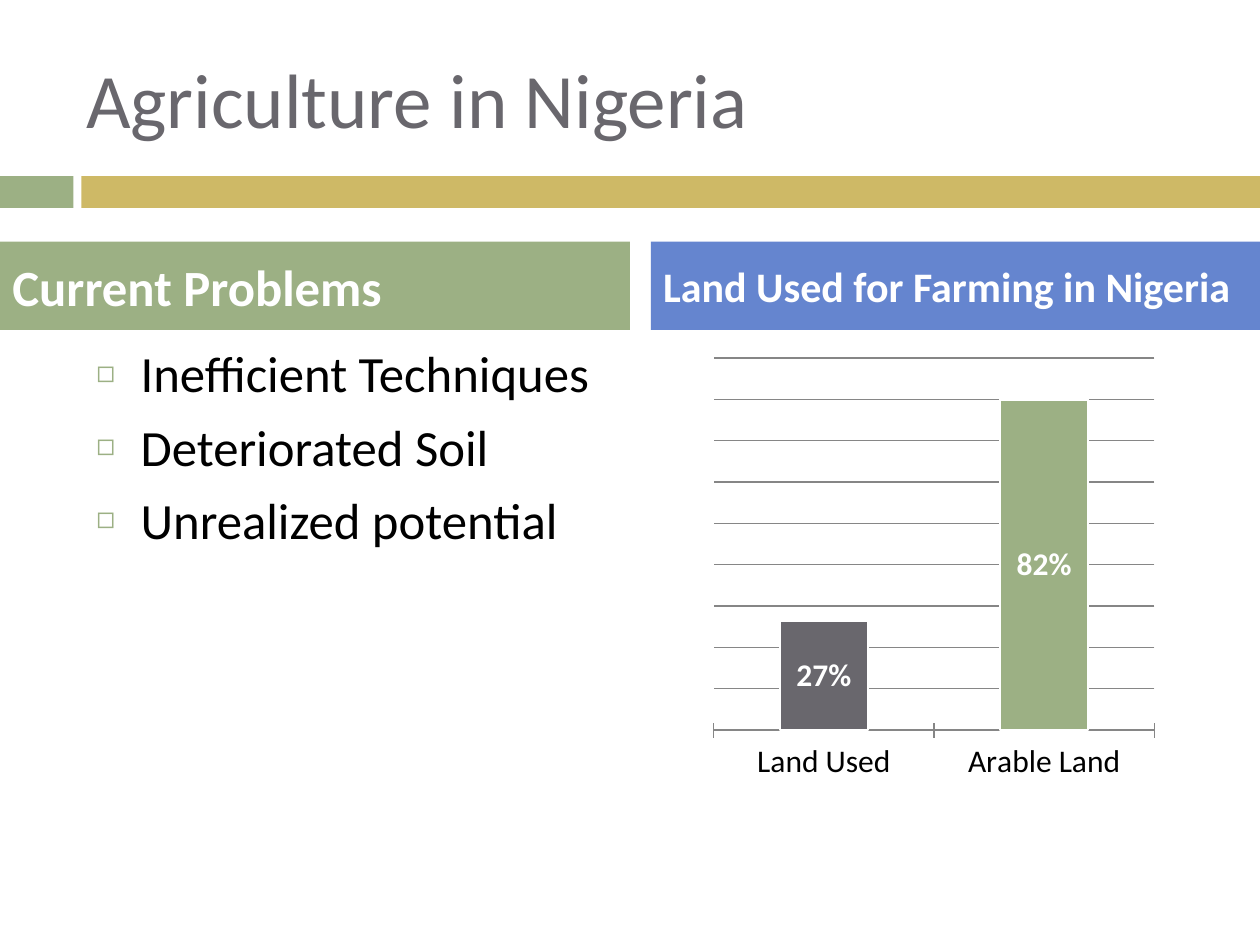
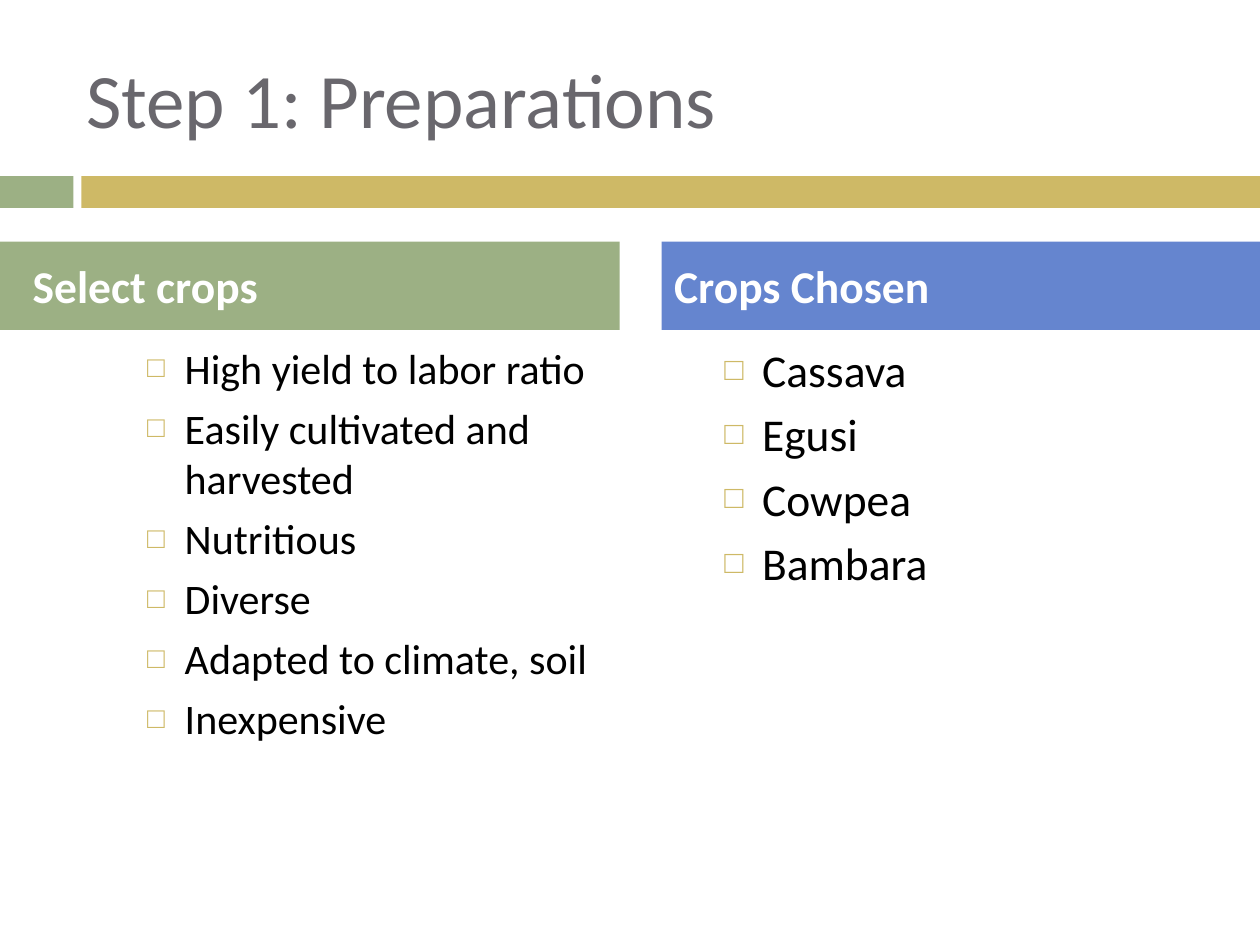
from lxml import etree
from pptx import Presentation
from pptx import util as u
from pptx.chart import data as cd
from pptx.dml import color as col
from pptx.enum import chart as ch, shapes, text
from pptx.oxml import ns, parse_xml

FONT = "Calibri"
HUES = {"green": "9CB084", "gold": "CEB966", "blue": "6585CF", "gray": "69676D",
        "line": "868686", "black": "000000", "white": "FFFFFF"}
WIDE, TALL = 25.4, 19.05

# Bullet styles: mark, its hue and size, left margin and hang in cm, space before in pt
MAIN = dict(level=0, mark="◻", hue="green", pct=60, left=0.89, hang=0.89, gap=7)
SUB = dict(level=1, mark="□", hue="gold", pct=70, left=1.78, hang=0.76, gap=5.5)

LAND = {"Land Used": (0.264, "27%", "gray"), "Arable Land": (0.8, "82%", "green")}

# Each head: text, size, left, right, extra inset; each list: style, size, items
SLIDES = [
    {"title": "Agriculture in Nigeria",
     "heads": [("Current Problems", 29, 0, 12.7, 0),
               ("Land Used for Farming in Nigeria", 24, 13.12, WIDE, 0)],
     "lists": [(MAIN, 29, ["Inefficient Techniques", "Deteriorated Soil",
                           "Unrealized potential"])],
     "chart": LAND},
    {"title": "Step 1: Preparations",
     "heads": [("Select crops", 26, 0, 12.49, 0.41),
               ("Crops Chosen", 26, 13.34, WIDE, 0)],
     "lists": [(SUB, 24, ["High yield to labor ratio",
                          "Easily cultivated and harvested", "Nutritious",
                          "Diverse", "Adapted to climate, soil", "Inexpensive"]),
               (SUB, 26, ["Cassava", "Egusi", "Cowpea", "Bambara"])]},
]

TITLE = (1.48, 0.76, 22.66, 2.41)
BANDS = [(0, 1.48, "green"), (1.64, WIDE, "gold")]
BAND_TOP, BAND_TALL = 3.55, 0.64
HEAD_TOP, HEAD_TALL = 4.87, 1.78
HEAD_HUES = ["green", "blue"]
LIST_LEFTS = [1.69, 13.33]
LIST_TOP, LIST_WIDE, LIST_TALL = 6.77, 10.8, 9.96
CHART = (13.97, 6.35, 9.53, 11)
PLOT = {"x": 0.044, "y": 0.079, "w": 0.932, "h": 0.682}
PERCENT = "0.00%"


def rgb(hue):
    return col.RGBColor.from_string(HUES[hue])


def paint(fill, hue):
    fill.solid()
    fill.fore_color.rgb = rgb(hue)


def place(shape, left, top, wide, tall):
    shape.left, shape.top = u.Cm(left), u.Cm(top)
    shape.width, shape.height = u.Cm(wide), u.Cm(tall)


def style(font, size, hue="black", bold=False):
    font.name, font.size, font.bold = FONT, u.Pt(size), bold
    font.color.rgb = rgb(hue)


def write(frame, lines, size, hue="black", bold=False, anchor="TOP", gap=0, list_style=None):
    frame.word_wrap = True
    frame.auto_size = text.MSO_AUTO_SIZE.NONE
    frame.vertical_anchor = text.MSO_ANCHOR[anchor]
    for n, line in enumerate(lines):
        para = frame.add_paragraph() if n else frame.paragraphs[0]
        para.alignment = text.PP_ALIGN.LEFT
        para.space_before = u.Pt(gap)
        run = para.add_run()
        run.text = line
        style(run.font, size, hue, bold)
        if list_style:
            bullet(para, **list_style)


def bullet(para, level, mark, hue, pct, left, hang, gap):
    para.level = level
    para.space_before = u.Pt(gap)
    props = para._p.get_or_add_pPr()
    props.set("marL", str(u.Cm(left)))
    props.set("indent", str(-u.Cm(hang)))
    tint = etree.SubElement(props, ns.qn("a:buClr"))
    etree.SubElement(tint, ns.qn("a:srgbClr"), val=HUES[hue])
    etree.SubElement(props, ns.qn("a:buSzPct"), val=str(pct * 1000))
    etree.SubElement(props, ns.qn("a:buChar"), char=mark)


def add_bands(slide):
    for left, right, hue in BANDS:
        band = slide.shapes.add_shape(
            shapes.MSO_SHAPE.RECTANGLE, u.Cm(left), u.Cm(BAND_TOP),
            u.Cm(right - left), u.Cm(BAND_TALL))
        band.shadow.inherit = False
        band.line.fill.background()
        paint(band.fill, hue)


def add_chart(slide, rows):
    data = cd.CategoryChartData(number_format=PERCENT)
    data.categories = list(rows)
    data.add_series("Series 1", [val for val, _, _ in rows.values()])
    chart = slide.shapes.add_chart(
        ch.XL_CHART_TYPE.COLUMN_STACKED, *map(u.Cm, CHART), data).chart
    chart.has_legend = chart.has_title = False
    style(chart.font, 18)

    axis = chart.value_axis
    axis.visible = False
    axis.has_major_gridlines = True
    axis.tick_labels.number_format = PERCENT
    axis.tick_labels.number_format_is_linked = False
    base = chart.category_axis
    base.major_tick_mark = ch.XL_TICK_MARK.CROSS
    for rule in (axis.major_gridlines.format.line, base.format.line):
        rule.color.rgb = rgb("line")
        rule.width = u.Pt(0.75)

    plot = chart.plots[0]
    plot.gap_width, plot.overlap, plot.vary_by_categories = 150, 100, False
    bars = plot.series[0]
    paint(bars.format.fill, "gold")
    tags = bars.data_labels
    tags.show_value = True
    tags.position = ch.XL_LABEL_POSITION.CENTER
    tags.number_format, tags.number_format_is_linked = PERCENT, False
    style(tags.font, 18, "white", True)
    for n, (_, label, hue) in enumerate(rows.values()):
        point = bars.points[n]
        paint(point.format.fill, hue)
        point.format.line.color.rgb = rgb("white")
        point.format.line.width = u.Pt(1.5)
        tag = point.data_label
        tag.position = ch.XL_LABEL_POSITION.CENTER
        run = tag.text_frame.paragraphs[0].add_run()
        run.text = label
        style(run.font, 18, "white", True)
    fix_plot(chart)


def fix_plot(chart):
    """Pin the inner plot area to the fractions in PLOT."""
    area = chart._chartSpace.chart.plotArea
    for old in area.findall(ns.qn("c:layout")):
        area.remove(old)
    parts = "".join(f'<c:{k}Mode val="edge"/>' for k in "xy")
    parts += "".join(f'<c:{k} val="{v}"/>' for k, v in PLOT.items())
    area.insert(0, parse_xml(
        f'<c:layout {ns.nsdecls("c")}><c:manualLayout><c:layoutTarget val="inner"/>'
        f'{parts}</c:manualLayout></c:layout>'))


def add_slide(deck, page):
    slide = deck.slides.add_slide(deck.slide_layouts.get_by_name("Comparison"))
    add_bands(slide)
    title, *slots = slide.placeholders
    heads, bodies = slots[::2], slots[1::2]
    place(title, *TITLE)
    write(title.text_frame, [page["title"]], 44, "gray", anchor="MIDDLE")

    for head, hue, (line, size, left, right, inset) in zip(heads, HEAD_HUES, page["heads"]):
        place(head, left, HEAD_TOP, right - left, HEAD_TALL)
        paint(head.fill, hue)
        head.text_frame.margin_left = u.Cm(0.25 + inset)
        write(head.text_frame, [line], size, "white", True, "MIDDLE", gap=7)

    for body, left, (kind, size, lines) in zip(bodies, LIST_LEFTS, page["lists"]):
        place(body, left, LIST_TOP, LIST_WIDE, LIST_TALL)
        write(body.text_frame, lines, size, list_style=kind)
    for spare in bodies[len(page["lists"]):]:
        spare.element.getparent().remove(spare.element)
    if "chart" in page:
        add_chart(slide, page["chart"])


def main():
    deck = Presentation()
    deck.slide_width, deck.slide_height = u.Cm(WIDE), u.Cm(TALL)
    for page in SLIDES:
        add_slide(deck, page)
    deck.save("out.pptx")


if __name__ == "__main__":
    main()
